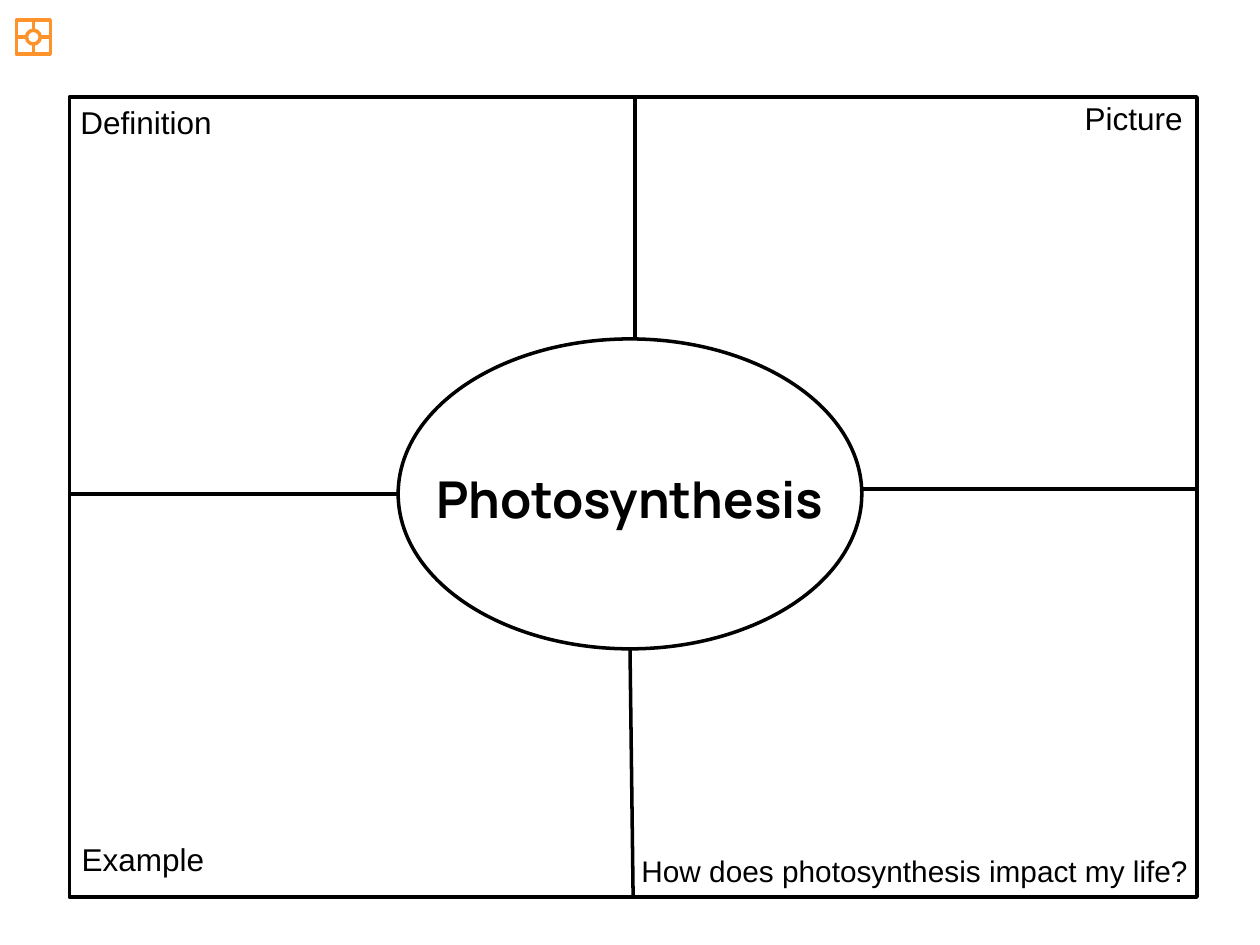
from typing import NamedTuple, Optional

from lxml.etree import SubElement
from pptx import Presentation
from pptx.dml.color import RGBColor
from pptx.enum.shapes import MSO_CONNECTOR, MSO_SHAPE
from pptx.enum.text import MSO_ANCHOR, MSO_AUTO_SIZE, PP_ALIGN
from pptx.oxml.ns import qn
from pptx.shapes.autoshape import Shape
from pptx.slide import Slide
from pptx.util import Inches, Pt

# The slide is a grid of 100 columns by 75 rows of square cells.
COLUMNS, ROWS = 100, 75
CELL = Inches(0.1)
BLACK, WHITE, ORANGE = "000000", "FFFFFF", "FF932B"
TOP, LEFT, BOTTOM, RIGHT = range(4)


class Box(NamedTuple):
    column: float
    row: float
    width: float
    height: float


class Divider(NamedTuple):
    """A line from the oval out to the frame, joined to a frame side if given."""
    start: tuple[float, float]
    end: tuple[float, float]
    frame_side: Optional[int] = None


class Organizer(NamedTuple):
    frame: Box
    oval: Box
    dividers: list[Divider]
    color: str


class Label(NamedTuple):
    text: str
    box: Box
    size: float
    align: PP_ALIGN = PP_ALIGN.LEFT
    font: str = "Arial"
    bold: bool = False


MAIN = Organizer(
    Box(5.5, 7.7, 89.5, 63.5),
    Box(31.6, 26.9, 36.8, 24.6),
    [
        Divider((50.4, 26.9), (50.4, 7.7)),
        Divider((50, 51.5), (50.2, 71.1), BOTTOM),
        Divider((31.6, 39.2), (5.5, 39.2)),
        Divider((68.4, 38.8), (95, 38.8)),
    ],
    BLACK,
)
ICON = Organizer(
    Box(1.3, 1.6, 2.7, 2.7),
    Box(2.1, 2.4, 1.1, 1.1),
    [
        Divider((2.65, 2.4), (2.65, 1.6), TOP),
        Divider((2.65, 3.5), (2.65, 4.3), BOTTOM),
        Divider((2.1, 2.95), (1.3, 2.95), LEFT),
        Divider((3.2, 2.95), (4, 2.95), RIGHT),
    ],
    ORANGE,
)
TITLE = Label("Photosynthesis", Box(32.7, 36.6, 34.6, 5.9), 29,
              PP_ALIGN.CENTER, "Manrope", True)
LABELS = [
    Label("Definition", Box(5.4, 7.7, 12.5, 4), 18),
    Label("Example", Box(5.5, 66.2, 11.8, 4), 18),
    Label("Picture", Box(85.1, 7.4, 9.9, 4), 18),
    Label("How does photosynthesis impact my life?",
          Box(46, 67.2, 49.3, 3.9), 17, PP_ALIGN.RIGHT),
]


def rgb(color: str) -> RGBColor:
    return RGBColor.from_string(color)


def cells(values) -> list[int]:
    return [round(value * CELL) for value in values]


def add_outline(slide: Slide, kind: MSO_SHAPE, box: Box, color: str) -> Shape:
    shape = slide.shapes.add_shape(kind, *cells(box))
    shape.shadow.inherit = False
    shape.fill.background()
    shape.line.color.rgb = rgb(color)
    shape.line.width = Pt(2)
    return shape


def add_organizer(slide: Slide, organizer: Organizer) -> None:
    frame = add_outline(slide, MSO_SHAPE.RECTANGLE, organizer.frame, organizer.color)
    for divider in organizer.dividers:
        connector = slide.shapes.add_connector(
            MSO_CONNECTOR.STRAIGHT, *cells(divider.start + divider.end))
        connector.line.color.rgb = rgb(organizer.color)
        connector.line.width = Pt(2)
        SubElement(connector.element.spPr, qn("a:effectLst"))
        if divider.frame_side is not None:
            connector.end_connect(frame, divider.frame_side)
    oval = add_outline(slide, MSO_SHAPE.OVAL, organizer.oval, organizer.color)
    oval.fill.solid()
    oval.fill.fore_color.rgb = rgb(WHITE)


def write_label(shape: Shape, label: Label) -> None:
    shape.left, shape.top, shape.width, shape.height = cells(label.box)
    frame = shape.text_frame
    frame.text = label.text
    frame.word_wrap = True
    frame.auto_size = MSO_AUTO_SIZE.SHAPE_TO_FIT_TEXT
    frame.vertical_anchor = MSO_ANCHOR.TOP
    paragraph = frame.paragraphs[0]
    paragraph.alignment = label.align
    paragraph.font.name = label.font
    paragraph.font.size = Pt(label.size)
    paragraph.font.bold = label.bold
    paragraph.font.color.rgb = rgb(BLACK)


def main() -> None:
    presentation = Presentation()
    presentation.slide_width = COLUMNS * CELL
    presentation.slide_height = ROWS * CELL
    slide = presentation.slides.add_slide(presentation.slide_layouts[5])

    add_organizer(slide, MAIN)
    title = slide.shapes.title
    write_label(title, TITLE)
    slide.shapes.element.append(title.element)  # bring in front of the oval
    for label in LABELS:
        write_label(slide.shapes.add_textbox(*cells(label.box)), label)
    add_organizer(slide, ICON)

    presentation.save("out.pptx")


if __name__ == "__main__":
    main()
